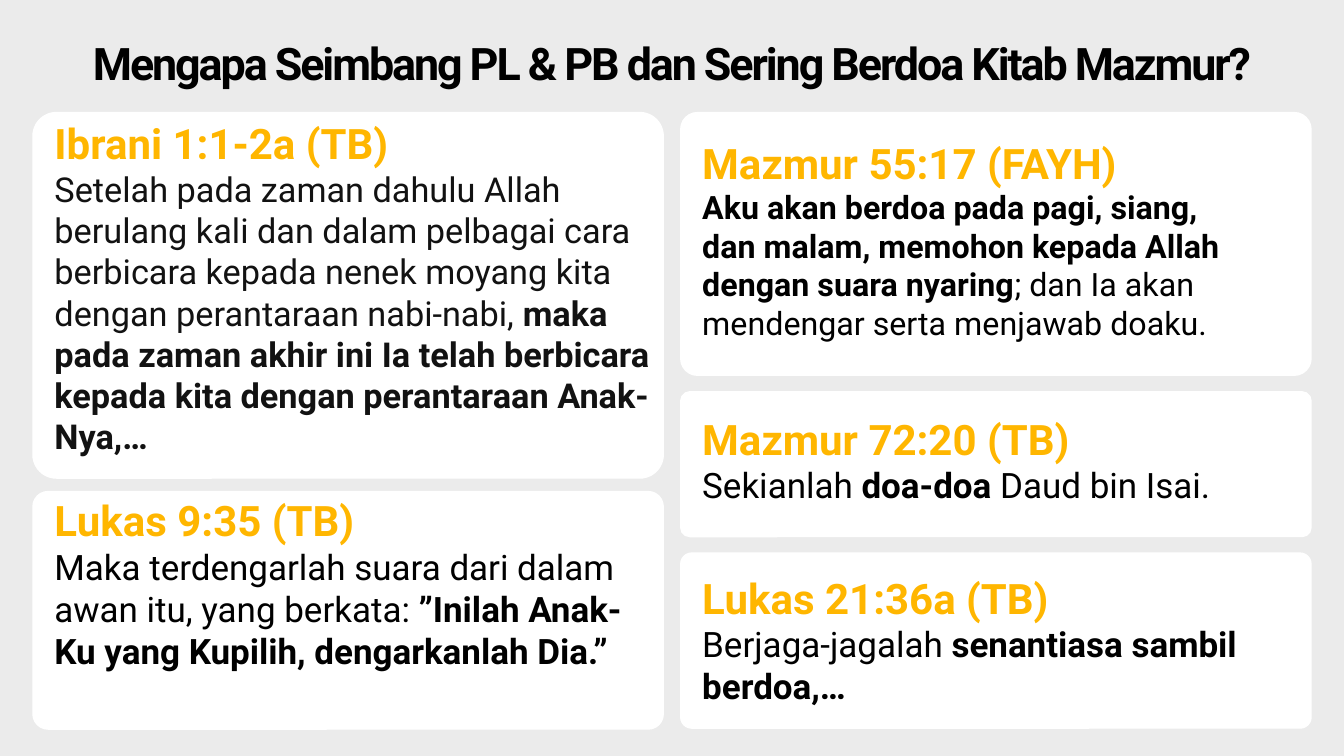
from pptx import Presentation
from pptx import util as u
from pptx.dml.color import RGBColor
from pptx.enum import shapes, text

# Slide, palette and two-column grid (inches)
WIDTH, HEIGHT = 13.33, 7.5
BACKDROP = RGBColor(0xEB, 0xEB, 0xEB)
WHITE = RGBColor(0xFF, 0xFF, 0xFF)
BLACK = RGBColor(0, 0, 0)
INK = RGBColor(0x12, 0x12, 0x12)
GOLD = RGBColor(0xFF, 0xB6, 0x00)
FONT = "Roboto"
MARGIN, GUTTER, CARDS_TOP = 0.32, 0.16, 1.11
COLUMN = (WIDTH - 2 * MARGIN - GUTTER) / 2
PADDING = 0.22

# Each verse: card height, text offset, text width, reference,
# body size, body colour, and (words, bold) parts
LEFT_VERSES = [
    (3.64, 0.06, 6.12, "Ibrani 1:1-2a (TB)", 24.5, INK, [
        ("Setelah pada zaman dahulu Allah berulang kali dan dalam pelbagai "
         "cara berbicara kepada nenek moyang kita dengan perantaraan "
         "nabi-nabi, ", False),
        ("maka pada zaman akhir ini Ia telah berbicara kepada kita dengan "
         "perantaraan Anak-Nya,…", True)]),
    (2.37, 0.04, 5.78, "Lukas 9:35 (TB)", 25, BLACK, [
        ("Maka terdengarlah suara dari dalam awan itu, yang berkata: ", False),
        ("”Inilah Anak-Ku yang Kupilih, dengarkanlah Dia.”", True)]),
]
RIGHT_VERSES = [
    (2.62, 0.25, 6.05, "Mazmur 55:17 (FAYH)", 23, BLACK, [
        ("Aku akan berdoa pada pagi, siang,\n"
         "dan malam, memohon kepada Allah dengan suara nyaring", True),
        ("; dan Ia akan mendengar serta menjawab doaku.", False)]),
    (1.45, 0.22, 5.78, "Mazmur 72:20 (TB)", 25, BLACK, [
        ("Sekianlah ", False), ("doa-doa ", True), ("Daud bin Isai.", False)]),
    (1.75, 0.2, 6.05, "Lukas 21:36a (TB)", 25, BLACK, [
        ("Berjaga-jagalah ", False), ("senantiasa sambil berdoa,…", True)]),
]


def add_text_frame(slide, left, top, width, height):
    box = slide.shapes.add_textbox(*map(u.Inches, (left, top, width, height)))
    frame = box.text_frame
    frame.word_wrap = True
    frame.margin_left = frame.margin_right = 0
    frame.margin_top = frame.margin_bottom = 0
    return frame


def write(paragraph, parts, size, color):
    """Fill a paragraph with (words, bold) parts; a newline is a line break."""
    font = paragraph.font
    font.name, font.size, font.color.rgb = FONT, u.Pt(size), color
    weights = {bold for _, bold in parts}
    if len(weights) == 1:
        font.bold = weights.pop()
    for words, bold in parts:
        for number, line in enumerate(words.split("\n")):
            if number:
                paragraph.add_line_break()
            run = paragraph.add_run()
            run.text = line
            if font.bold is None:
                run.font.bold = bold


def add_title(slide, words):
    title = add_text_frame(slide, 0, 0.35, WIDTH, 0.54).paragraphs[0]
    title.alignment = text.PP_ALIGN.CENTER
    write(title, [(words, True)], 32, BLACK)
    title.runs[0].font._element.set("spc", "-150")


def add_card(slide, left, top, height):
    card = slide.shapes.add_shape(
        shapes.MSO_SHAPE.ROUNDED_RECTANGLE,
        *map(u.Inches, (left, top, COLUMN, height)))
    card.adjustments[0] = 0.066
    card.shadow.inherit = False
    card.fill.solid()
    card.fill.fore_color.rgb = WHITE
    card.line.fill.background()


def add_verses(slide, column, gap, verses):
    """Stack verse cards down one column of the grid."""
    left = MARGIN + column * (COLUMN + GUTTER)
    top = CARDS_TOP
    for height, offset, width, reference, size, color, parts in verses:
        add_card(slide, left, top, height)
        frame = add_text_frame(slide, left + PADDING, top + offset, width,
                               height - 2 * offset)
        write(frame.paragraphs[0], [(reference, True)], 30, GOLD)
        write(frame.add_paragraph(), parts, size, color)
        top += height + gap


def main():
    deck = Presentation()
    deck.slide_width, deck.slide_height = u.Inches(WIDTH), u.Inches(HEIGHT)
    slide = deck.slides.add_slide(deck.slide_layouts[6])

    # Backdrop and heading
    slide.background.fill.solid()
    slide.background.fill.fore_color.rgb = BACKDROP
    add_title(slide, "Mengapa Seimbang PL & PB dan Sering Berdoa Kitab Mazmur?")

    # Verse cards
    add_verses(slide, 0, 0.12, LEFT_VERSES)
    add_verses(slide, 1, 0.15, RIGHT_VERSES)
    deck.save("out.pptx")


if __name__ == "__main__":
    main()
